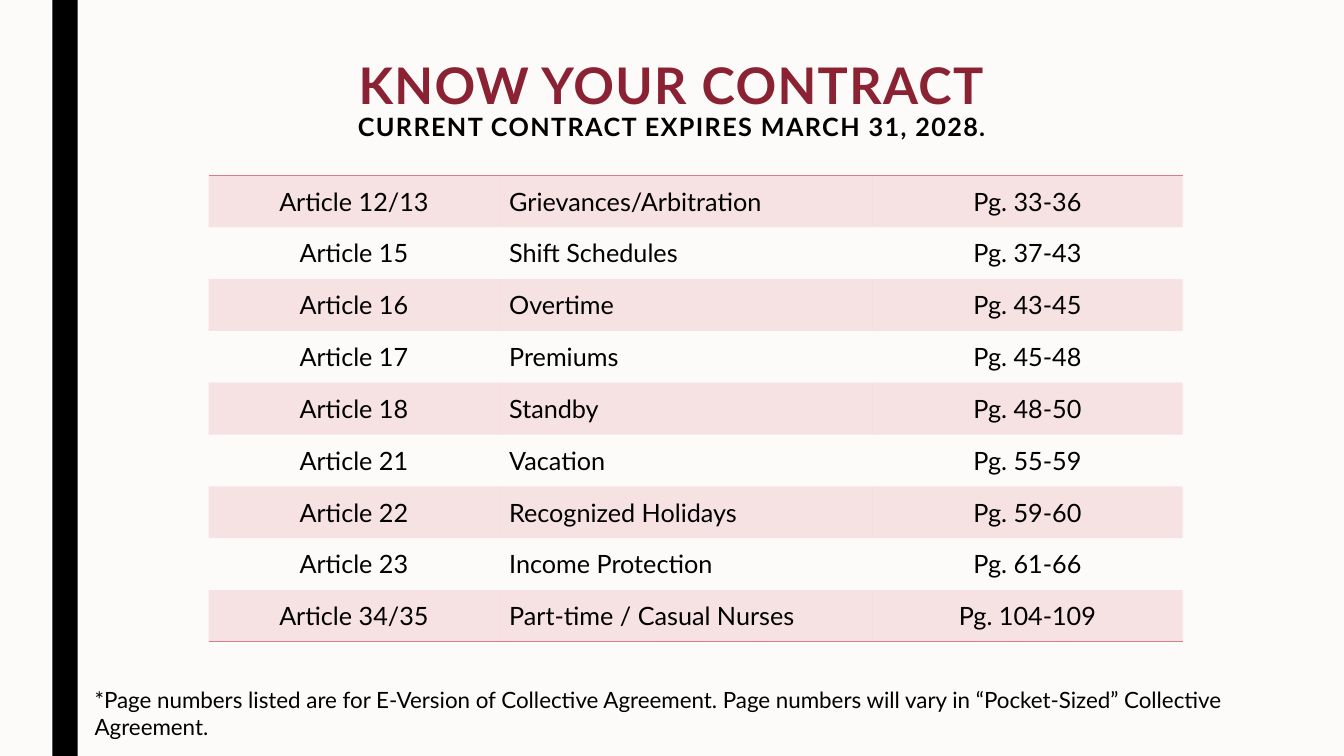
from typing import NamedTuple

from lxml.etree import SubElement
from pptx import Presentation
from pptx.dml.color import RGBColor
from pptx.enum.shapes import MSO_SHAPE as Shape
from pptx.enum.text import MSO_ANCHOR as Anchor, MSO_AUTO_SIZE as Fit, PP_ALIGN as Align
from pptx.oxml import parse_xml
from pptx.oxml.ns import nsdecls, qn
from pptx.util import Inches, Pt

FONT = "Lato"
BLACK, PAPER, WINE, ROSE = "000000", "FCFBF9", "8A2234", "DE7A8B"
NO_STYLE = "{2D5ABB26-0587-4C30-8999-92F81FD0307C}"


class Entry(NamedTuple):
    article: str
    topic: str
    pages: str


class Column(NamedTuple):
    width: float
    align: Align


ENTRIES = [
    Entry("Article 12/13", "Grievances/Arbitration", "Pg. 33-36"),
    Entry("Article 15", "Shift Schedules", "Pg. 37-43"),
    Entry("Article 16", "Overtime", "Pg. 43-45"),
    Entry("Article 17", "Premiums", "Pg. 45-48"),
    Entry("Article 18", "Standby", "Pg. 48-50"),
    Entry("Article 21", "Vacation", "Pg. 55-59"),
    Entry("Article 22", "Recognized Holidays", "Pg. 59-60"),
    Entry("Article 23", "Income Protection", "Pg. 61-66"),
    Entry("Article 34/35", "Part-time / Casual Nurses", "Pg. 104-109"),
]
COLUMNS = [
    Column(2.88, Align.CENTER),
    Column(3.7, Align.LEFT),
    Column(3.08, Align.CENTER),
]


def paint(fill, color: str) -> None:
    fill.solid()
    fill.fore_color.rgb = RGBColor.from_string(color)


def style(font, size: float, color: str = BLACK) -> None:
    font.name = FONT
    font.size = Pt(size)
    font.color.rgb = RGBColor.from_string(color)


def box(left: float, top: float, width: float, height: float) -> tuple:
    return Inches(left), Inches(top), Inches(width), Inches(height)


def rule(cell, side: str) -> None:
    """Draw a one-point rose border on one side of a cell."""
    line = parse_xml(
        f'<a:{side} {nsdecls("a")} w="12700"><a:solidFill>'
        f'<a:srgbClr val="{ROSE}"/></a:solidFill></a:{side}>')
    cell._tc.get_or_add_tcPr().insert(0, line)


def tint(cell) -> None:
    """Fill a cell with rose at 20% opacity."""
    paint(cell.fill, ROSE)
    for color in cell._tc.tcPr.iter(qn("a:srgbClr")):
        SubElement(color, qn("a:alpha"), val="20000")


def add_title(slide) -> None:
    title = slide.shapes.title
    title.left, title.top, title.width, title.height = box(2.6, 0.56, 8.13, 1)
    frame = title.text_frame
    frame.auto_size = Fit.NONE
    frame.word_wrap = True
    frame.vertical_anchor = Anchor.TOP
    para = frame.paragraphs[0]
    para.alignment = Align.CENTER
    para.line_spacing = 0.89
    head = para.add_run()
    head.text = "KNOW YOUR CONTRACT"
    style(head.font, 36, WINE)
    para.add_line_break()
    sub = para.add_run()
    sub.text = "CURRENT CONTRACT EXPIRES MARCH 31, 2028."
    style(sub.font, 18)
    for run in para.runs:
        run.font.bold = True
        run.font._element.set("spc", "100")


def add_grid(slide) -> None:
    count = len(ENTRIES)
    frame = slide.shapes.add_table(count, len(COLUMNS), *box(2.07, 1.74, 9.66, 4.63))
    table = frame.table
    table.first_row = table.horz_banding = False
    frame._element.find(".//" + qn("a:tableStyleId")).text = NO_STYLE
    for col, spec in zip(table.columns, COLUMNS):
        col.width = Inches(spec.width)
    for i, entry in enumerate(ENTRIES):
        for j, text in enumerate(entry):
            cell = table.cell(i, j)
            cell.text = text
            cell.vertical_anchor = Anchor.MIDDLE
            para = cell.text_frame.paragraphs[0]
            para.alignment = COLUMNS[j].align
            style(para.font, 18)
            if i % 2:
                cell.fill.background()
            else:
                tint(cell)
            if i == 0:
                rule(cell, "lnT")
            if i == count - 1:
                rule(cell, "lnB")


def add_note(slide) -> None:
    frame = slide.shapes.add_textbox(*box(0.84, 6.76, 12.26, 0.37)).text_frame
    frame.word_wrap = True
    para = frame.paragraphs[0]
    para.text = (
        "*Page numbers listed are for E-Version of Collective Agreement. "
        "Page numbers will vary in “Pocket-Sized” Collective Agreement.")
    style(para.font, 16)


def main() -> None:
    deck = Presentation()
    deck.slide_width, deck.slide_height = Inches(13.33), Inches(7.5)
    slide = deck.slides.add_slide(deck.slide_layouts[5])
    paint(slide.background.fill, PAPER)

    # Side bar
    bar = slide.shapes.add_shape(Shape.RECTANGLE, *box(0.52, 0, 0.25, 7.5))
    bar.shadow.inherit = False
    paint(bar.fill, BLACK)
    bar.line.fill.background()

    # Heading, contract table and footnote
    add_title(slide)
    add_grid(slide)
    add_note(slide)
    deck.save("out.pptx")


if __name__ == "__main__":
    main()
